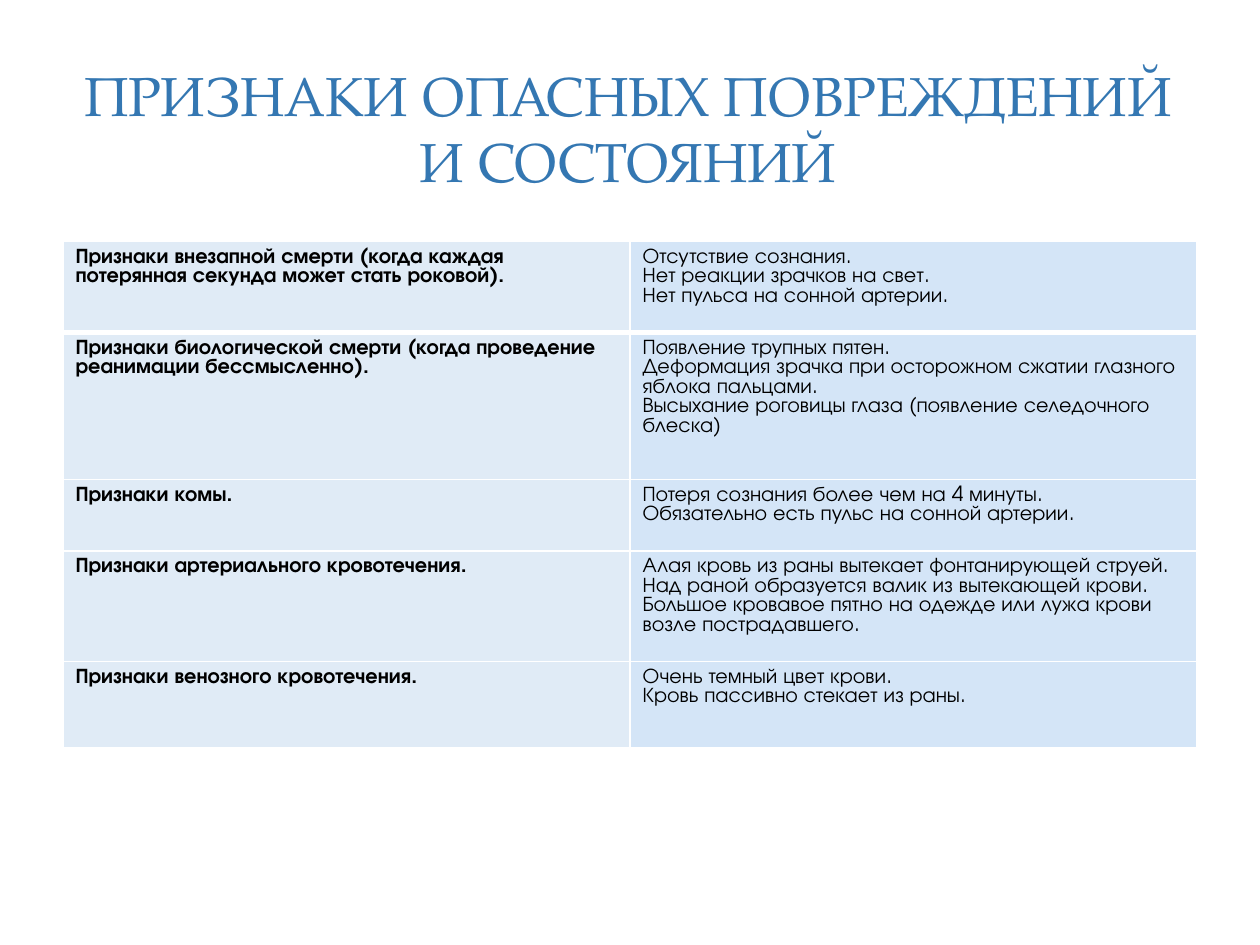
from pptx import Presentation
from pptx.dml.color import RGBColor
from pptx.enum.shapes import MSO_SHAPE
from pptx.enum.text import MSO_ANCHOR, MSO_AUTO_SIZE, PP_ALIGN
from pptx.oxml import parse_xml
from pptx.oxml.ns import nsdecls
from pptx.util import Pt

RECTANGLE = MSO_SHAPE.RECTANGLE
ROUNDED = MSO_SHAPE.ROUNDED_RECTANGLE
CENTER = PP_ALIGN.CENTER
MIDDLE = MSO_ANCHOR.MIDDLE
NO_FIT = MSO_AUTO_SIZE.NONE
TITLE_ONLY = 5

TITLE = "ПРИЗНАКИ ОПАСНЫХ ПОВРЕЖДЕНИЙ И СОСТОЯНИЙ"
# condition, its signs, row height
ROWS = [
    ("Признаки внезапной смерти (когда каждая потерянная секунда может стать роковой).",
     ["Отсутствие сознания.",
      "Нет реакции зрачков на свет.",
      "Нет пульса на сонной артерии."], 52),
    ("Признаки биологической смерти (когда проведение реанимации бессмысленно).",
     ["Появление трупных пятен.",
      "Деформация зрачка при осторожном сжатии глазного яблока пальцами.",
      "Высыхание роговицы глаза (появление селедочного блеска)"], 84),
    ("Признаки комы.",
     ["Потеря сознания более чем на 4 минуты.",
      "Обязательно есть пульс на сонной артерии."], 40.8),
    ("Признаки артериального кровотечения.",
     ["Алая кровь из раны вытекает фонтанирующей струей.",
      "Над раной образуется валик из вытекающей крови.",
      "Большое кровавое пятно на одежде или лужа крови возле пострадавшего."], 63.2),
    ("Признаки венозного кровотечения.",
     ["Очень темный цвет крови.",
      "Кровь пассивно стекает из раны."], 49.6),
]
# preset, box, opacity in percent
PANELS = [
    (ROUNDED, (7.2, 7.9, 705.6, 524.9), 100),
    (RECTANGLE, (21.6, 21.6, 676.8, 104.4), 83),
    (RECTANGLE, (29.5, 29.5, 660.2, 87.8), 100),
]
PANEL_ROUNDING = 0.02

THEME = {
    "title_font": "TeX Gyre Pagella", "title_size": 31.5, "title_color": "3477B2",
    "body_font": "TeX Gyre Adventor", "body_size": 12, "body_color": "000000",
    "line_pitch": 11.16,
    "column_fills": ("E0EBF6", "D4E5F7"), "panel": "FFFFFF",
    "border": "FFFFFF", "border_width": 1, "header_border_width": 3,
}


def add_run(p, text, role, bold=False):
    r = p.add_run()
    r.text = text
    r.font.name = THEME[role + "_font"]
    r.font.size = Pt(THEME[role + "_size"])
    r.font.color.rgb = RGBColor.from_string(THEME[role + "_color"])
    r.font.bold = bold


def set_fill(fill, color):
    fill.solid()
    fill.fore_color.rgb = RGBColor.from_string(color)


def add_panels(s):
    for preset, box, opacity in PANELS:
        sp = s.shapes.add_shape(preset, *map(Pt, box))
        sp.shadow.inherit = False
        sp.line.fill.background()
        set_fill(sp.fill, THEME["panel"])
        if preset == ROUNDED:
            sp.adjustments[0] = PANEL_ROUNDING
        if opacity < 100:
            color = sp.element.spPr.find(".//{*}srgbClr")
            color.append(parse_xml(f'<a:alpha {nsdecls("a")} val="{opacity * 1000}"/>'))


def set_borders(cell, widths):
    """Draw cell borders; widths maps L, R, T and B, in that order, to points."""
    tc_pr = cell._tc.get_or_add_tcPr()
    for i, (side, width) in enumerate(widths.items()):
        tc_pr.insert(i, parse_xml(
            f'<a:ln{side} {nsdecls("a")} w="{Pt(width)}"><a:solidFill>'
            f'<a:srgbClr val="{THEME["border"]}"/></a:solidFill></a:ln{side}>'))


def fill_cell(cell, paragraphs, color, bold, widths):
    set_fill(cell.fill, color)
    set_borders(cell, widths)
    tf = cell.text_frame
    for i, text in enumerate(paragraphs):
        p = tf.add_paragraph() if i else tf.paragraphs[0]
        p.line_spacing = Pt(THEME["line_pitch"])
        add_run(p, text, "body", bold)


def add_title(s):
    title = s.shapes.title
    s.shapes.element.append(title.element)  # in front of the panels
    title.left, title.top, title.width, title.height = Pt(33.8), Pt(32), Pt(650), Pt(82)
    tf = title.text_frame
    tf.word_wrap = True
    tf.auto_size = NO_FIT
    tf.vertical_anchor = MIDDLE
    p = tf.paragraphs[0]
    p.alignment = CENTER
    add_run(p, TITLE, "title")


def add_signs_table(s):
    height = sum(row[2] for row in ROWS)
    table = s.shapes.add_table(len(ROWS), 2, Pt(36), Pt(138), Pt(648), Pt(height)).table
    thin, thick = THEME["border_width"], THEME["header_border_width"]
    for i, (condition, signs, row_height) in enumerate(ROWS):
        table.rows[i].height = Pt(row_height)
        widths = {"L": thin, "R": thin,
                  "T": thick if i == 1 else thin,
                  "B": thick if i == 0 else thin}
        for j, paragraphs in enumerate(([condition], signs)):
            fill_cell(table.cell(i, j), paragraphs, THEME["column_fills"][j], j == 0, widths)


def main():
    prs = Presentation()
    prs.slide_width, prs.slide_height = Pt(720), Pt(540)
    s = prs.slides.add_slide(prs.slide_layouts[TITLE_ONLY])
    add_panels(s)
    add_title(s)
    add_signs_table(s)
    prs.save("out.pptx")


if __name__ == "__main__":
    main()
